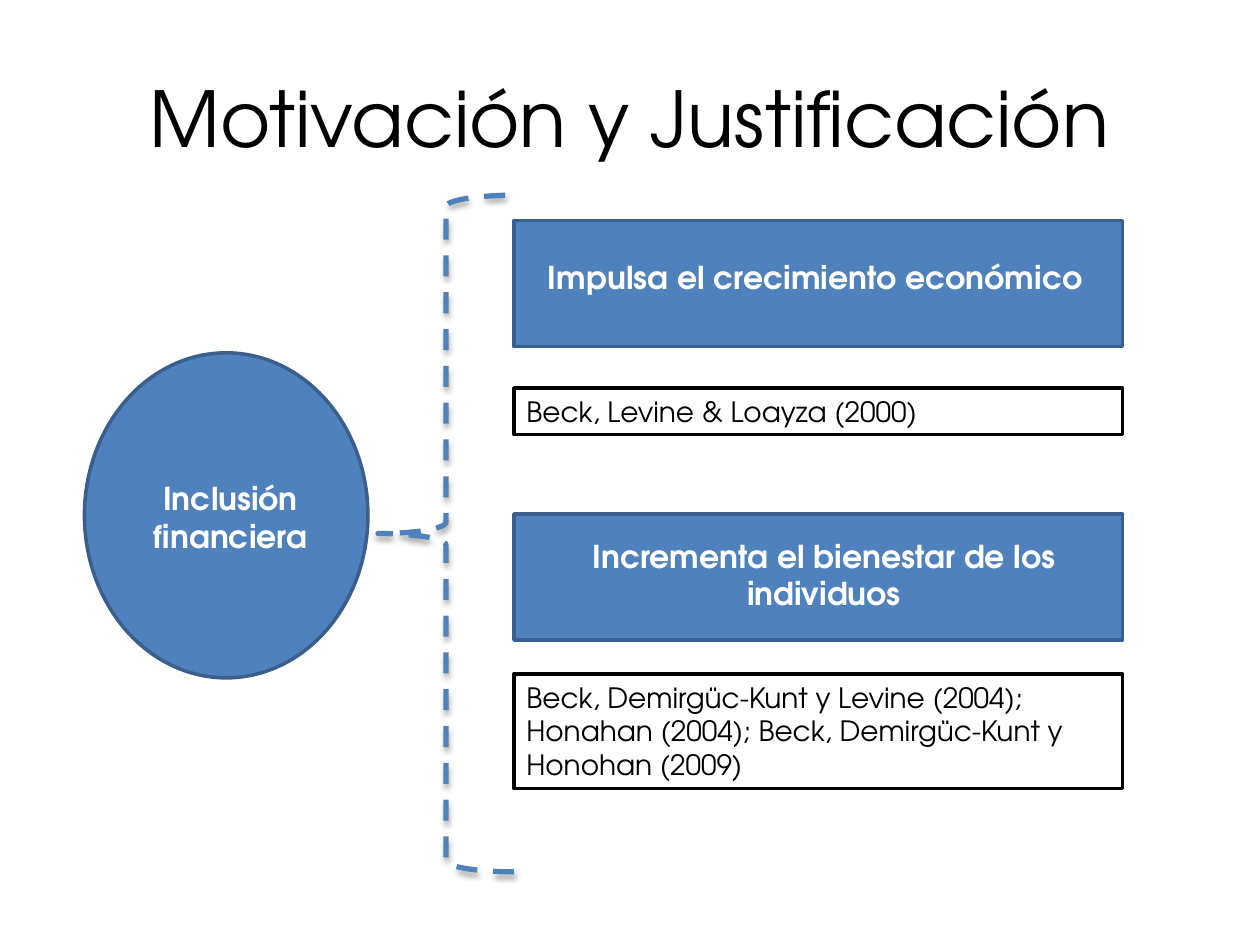
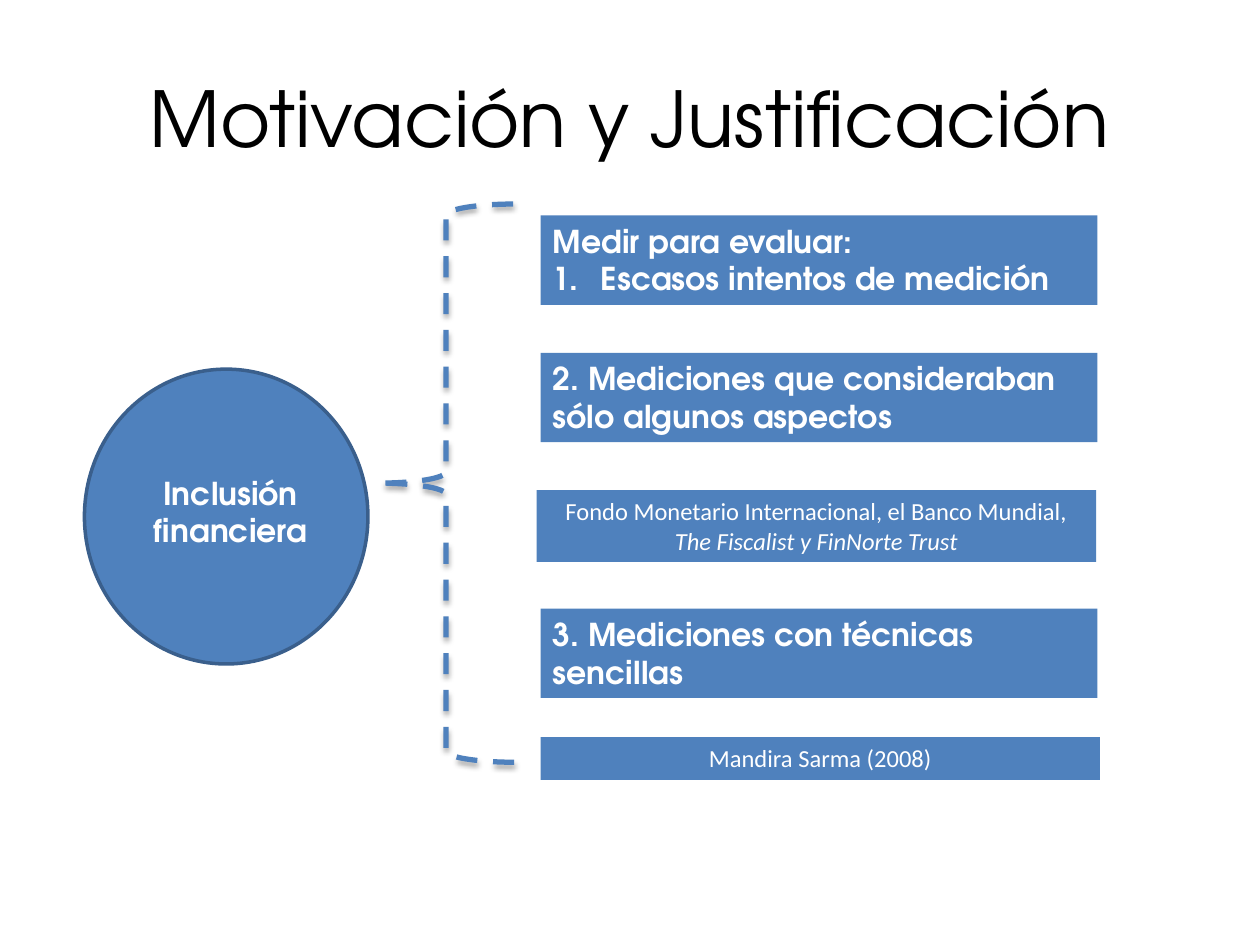
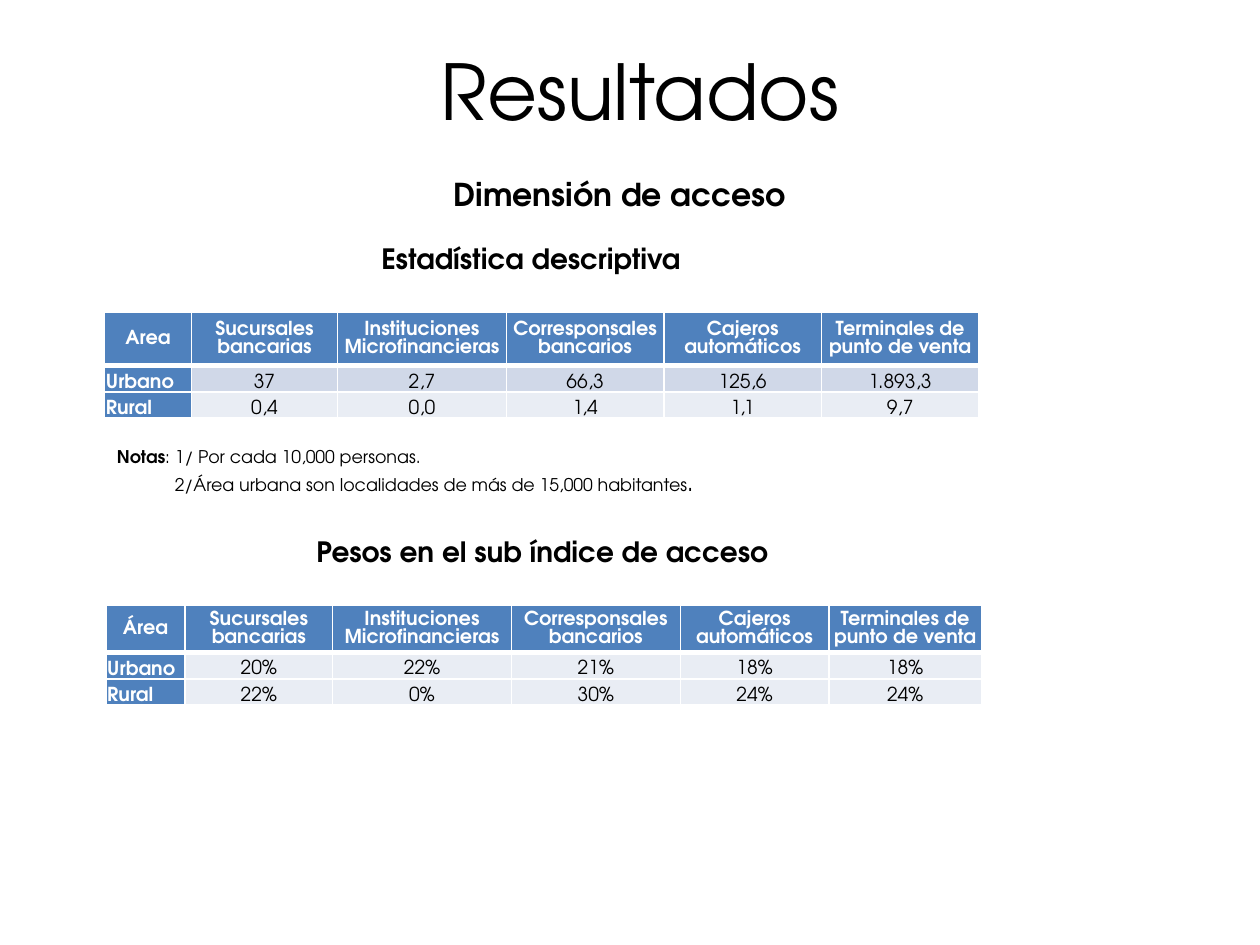
"""Builds three slides on financial inclusion: two motivation diagrams and one results page."""
from lxml.etree import SubElement
from pptx import Presentation
from pptx.dml.color import RGBColor
from pptx.enum.dml import MSO_LINE
from pptx.enum.shapes import MSO_SHAPE as SHAPE
from pptx.enum.text import MSO_ANCHOR as ANCHOR, MSO_AUTO_SIZE as AUTO, PP_ALIGN as ALIGN
from pptx.oxml import parse_xml
from pptx.oxml.ns import nsdecls, qn
from pptx.util import Inches, Pt

BLUE = RGBColor(0x4F, 0x81, 0xBD)
DARK_BLUE = RGBColor(0x3A, 0x5F, 0x8C)
BAND = RGBColor(0xD0, 0xD8, 0xE8)
LIGHT_BAND = RGBColor(0xE9, 0xED, 0xF4)
BLACK = RGBColor(0, 0, 0)
WHITE = RGBColor(0xFF, 0xFF, 0xFF)
ADVENTOR = "TeX Gyre Adventor"
CALIBRI = "Calibri"


def write(paragraph, text, size, color=BLACK, bold=False, align=None, face=ADVENTOR):
    run = paragraph.add_run()
    run.text = text
    run.font.name, run.font.size, run.font.bold = face, Pt(size), bold
    run.font.color.rgb = color
    if align is not None:
        paragraph.alignment = align
    return run


def add_box(slide, bounds, preset=None, fill=None, outline=None):
    place = [Inches(value) for value in bounds]
    if preset is None:
        box = slide.shapes.add_textbox(*place)
    else:
        box = slide.shapes.add_shape(preset, *place)
        box.shadow.inherit = False
        if fill is None:
            box.fill.background()
        else:
            box.fill.solid()
            box.fill.fore_color.rgb = fill
        if outline is None:
            box.line.fill.background()
        else:
            box.line.color.rgb = outline
            box.line.width = Pt(2)
    box.text_frame.word_wrap = True
    box.text_frame.vertical_anchor = ANCHOR.TOP
    box.text_frame.paragraphs[0].alignment = ALIGN.LEFT
    return box


deck = Presentation()
deck.slide_width, deck.slide_height = Inches(10), Inches(7.5)

HEADINGS = [
    ("Motivación y Justificación", (0.5, 0.3, 9, 1.25), 44, False),
    ("Motivación y Justificación", (0.5, 0.3, 9, 1.25), 44, False),
    ("Dimensión de acceso", (0.42, 1.2, 9, 0.67), 18, True),
]
for heading, bounds, size, bold in HEADINGS:
    title = deck.slides.add_slide(deck.slide_layouts[5]).shapes.title
    title.left, title.top, title.width, title.height = [Inches(value) for value in bounds]
    title.text_frame.auto_size = AUTO.NONE
    title.text_frame.vertical_anchor = ANCHOR.MIDDLE
    write(title.text_frame.paragraphs[0], heading, size, bold=bold, align=ALIGN.CENTER)
benefits, measurement, results = deck.slides

DIAGRAMS = [
    (benefits, (2.8, 2.58), (3.75, 0.71), (1.55, 5.37)),
    (measurement, (2.93, 2.34), (3.71, 0.78), (1.62, 4.43)),
]
for slide, circle_span, topic_span, brace_span in DIAGRAMS:
    add_box(slide, (0.67, circle_span[0], 2.25, circle_span[1]), SHAPE.OVAL, BLUE, DARK_BLUE)
    topic = add_box(slide, (1.08, topic_span[0], 1.5, topic_span[1]))
    write(topic.text_frame.paragraphs[0], "Inclusión financiera", 18, WHITE, True, ALIGN.CENTER)
    brace = add_box(slide, (3, brace_span[0], 1.08, brace_span[1]), SHAPE.LEFT_BRACE, outline=BLUE)
    brace.line.width = Pt(3)
    brace.line.dash_style = MSO_LINE.DASH
    effects = brace.element.spPr.find(qn("a:effectLst"))
    effects.append(parse_xml(
        f'<a:outerShdw {nsdecls("a")} blurRad="{Pt(3.1)}" dist="{Pt(1.8)}" dir="5400000" rotWithShape="0">'
        '<a:srgbClr val="000000"><a:alpha val="35000"/></a:srgbClr></a:outerShdw>'))

BENEFITS = [
    (1.75, "Impulsa el crecimiento económico", (4.25, 2, 4.5, 0.4), ALIGN.LEFT),
    (4.08, "Incrementa el bienestar de los individuos", (4.33, 4.21, 4.42, 0.71), ALIGN.CENTER),
]
for top, benefit, bounds, align in BENEFITS:
    add_box(benefits, (4.08, top, 4.83, 1), SHAPE.RECTANGLE, BLUE, DARK_BLUE)
    label = add_box(benefits, bounds)
    write(label.text_frame.paragraphs[0], benefit, 18, WHITE, True, align)

CITATIONS = [
    (3.08, 0.37, "Beck, Levine & Loayza (2000)"),
    (5.35, 0.91, "Beck, Demirgüc-Kunt y Levine (2004); Honahan (2004); Beck, Demirgüc-Kunt y Honohan (2009)"),
]
for top, height, citation in CITATIONS:
    source = add_box(benefits, (4.08, top, 4.83, height), SHAPE.RECTANGLE, WHITE, BLACK)
    write(source.text_frame.paragraphs[0], citation, 16)

PROBLEMS = [
    (1.71, "Medir para evaluar:"),
    (2.8, "2. Mediciones que consideraban sólo algunos aspectos"),
    (4.83, "3. Mediciones con técnicas sencillas"),
]
for top, problem in PROBLEMS:
    panel = add_box(measurement, (4.29, top, 4.42, 0.71), SHAPE.RECTANGLE, BLUE)
    write(panel.text_frame.paragraphs[0], problem, 18, WHITE, True)
    if top == 1.71:
        numbered = panel.text_frame.add_paragraph()
        properties = numbered._p.get_or_add_pPr()
        properties.set("marL", str(Inches(0.38)))
        properties.set("indent", str(-Inches(0.38)))
        SubElement(properties, qn("a:buFont"), typeface="+mj-lt")
        SubElement(properties, qn("a:buAutoNum"), type="arabicPeriod")
        write(numbered, "Escasos intentos de medición", 18, WHITE, True, ALIGN.LEFT)

EXAMPLES = [
    ((4.26, 3.89, 4.44, 0.57),
     [("Fondo Monetario Internacional, el Banco Mundial, ", False), ("The Fiscalist y FinNorte Trust", True)]),
    ((4.29, 5.85, 4.44, 0.34), [("Mandira Sarma (2008)", False)]),
]
for bounds, parts in EXAMPLES:
    example = add_box(measurement, bounds, SHAPE.RECTANGLE, BLUE)
    for text, italic in parts:
        run = write(example.text_frame.paragraphs[0], text, 14, WHITE, align=ALIGN.CENTER, face=CALIBRI)
        run.font.italic = italic

section = add_box(results, (0.58, 0.09, 9, 1.25))
section.text_frame.vertical_anchor = ANCHOR.MIDDLE
write(section.text_frame.paragraphs[0], "Resultados", 44, align=ALIGN.CENTER)

CAPTIONS = [(0.75, 1.87, "Estadística descriptiva"), (0.84, 4.19, "Pesos en el sub índice de acceso")]
for left, top, caption in CAPTIONS:
    subtitle = add_box(results, (left, top, 6.93, 0.67))
    write(subtitle.text_frame.paragraphs[0], caption, 16, bold=True, align=ALIGN.CENTER)

notes = add_box(results, (0.83, 3.49, 6.93, 0.51)).text_frame
write(notes.paragraphs[0], "Notas", 10, bold=True)
write(notes.paragraphs[0], ": 1/ Por cada 10,000 personas.", 10)
urban_note = notes.add_paragraph()
urban_note._p.get_or_add_pPr().set("marL", str(Inches(0.46)))
write(urban_note, "2/Área urbana son localidades de más de 15,000 habitantes", 10)
write(urban_note, ".", 14)

CHANNELS = ["Sucursales bancarias", "Instituciones Microfinancieras", "Corresponsales bancarios",
            "Cajeros automáticos", "Terminales de punto de venta"]
TABLES = [
    ((0.83, 2.48), [0.69, 1.16, 1.34, 1.25, 1.25, 1.25], 0.42, BAND,
     [["Area", *CHANNELS],
      ["Urbano", "37", "2,7", "66,3", "125,6", "1.893,3"],
      ["Rural", "0,4", "0,0", "1,4", "1,1", "9,7"]]),
    ((0.84, 4.8), [0.63, 1.17, 1.42, 1.34, 1.18, 1.21], 0.37, LIGHT_BAND,
     [["Área", *CHANNELS],
      ["Urbano", "20%", "22%", "21%", "18%", "18%"],
      ["Rural", "22%", "0%", "30%", "24%", "24%"]]),
]
for (left, top), widths, header_height, urban_fill, rows in TABLES:
    heights = [header_height, 0.21, 0.21]
    table = results.shapes.add_table(len(rows), len(widths), Inches(left), Inches(top),
                                     Inches(sum(widths)), Inches(sum(heights))).table
    for column, width in zip(table.columns, widths):
        column.width = Inches(width)
    for r, values in enumerate(rows):
        table.rows[r].height = Inches(heights[r])
        for c, value in enumerate(values):
            cell = table.cell(r, c)
            is_label = r == 0 or c == 0
            cell.margin_left = cell.margin_right = cell.margin_top = Inches(0.01)
            cell.margin_bottom = 0
            cell.vertical_anchor = ANCHOR.MIDDLE if r == 0 else ANCHOR.BOTTOM
            for side in "LRTB":
                weight = 3 if (r, side) in [(0, "B"), (1, "T")] else 1
                cell._tc.get_or_add_tcPr().append(parse_xml(
                    f'<a:ln{side} {nsdecls("a")} w="{Pt(weight)}"><a:solidFill>'
                    f'<a:srgbClr val="{WHITE}"/></a:solidFill></a:ln{side}>'))
            cell.fill.solid()
            cell.fill.fore_color.rgb = BLUE if is_label else [BLUE, urban_fill, LIGHT_BAND][r]
            write(cell.text_frame.paragraphs[0], value, 11, WHITE if is_label else BLACK, is_label,
                  ALIGN.LEFT if r and c == 0 else ALIGN.CENTER)

deck.save("out.pptx")
